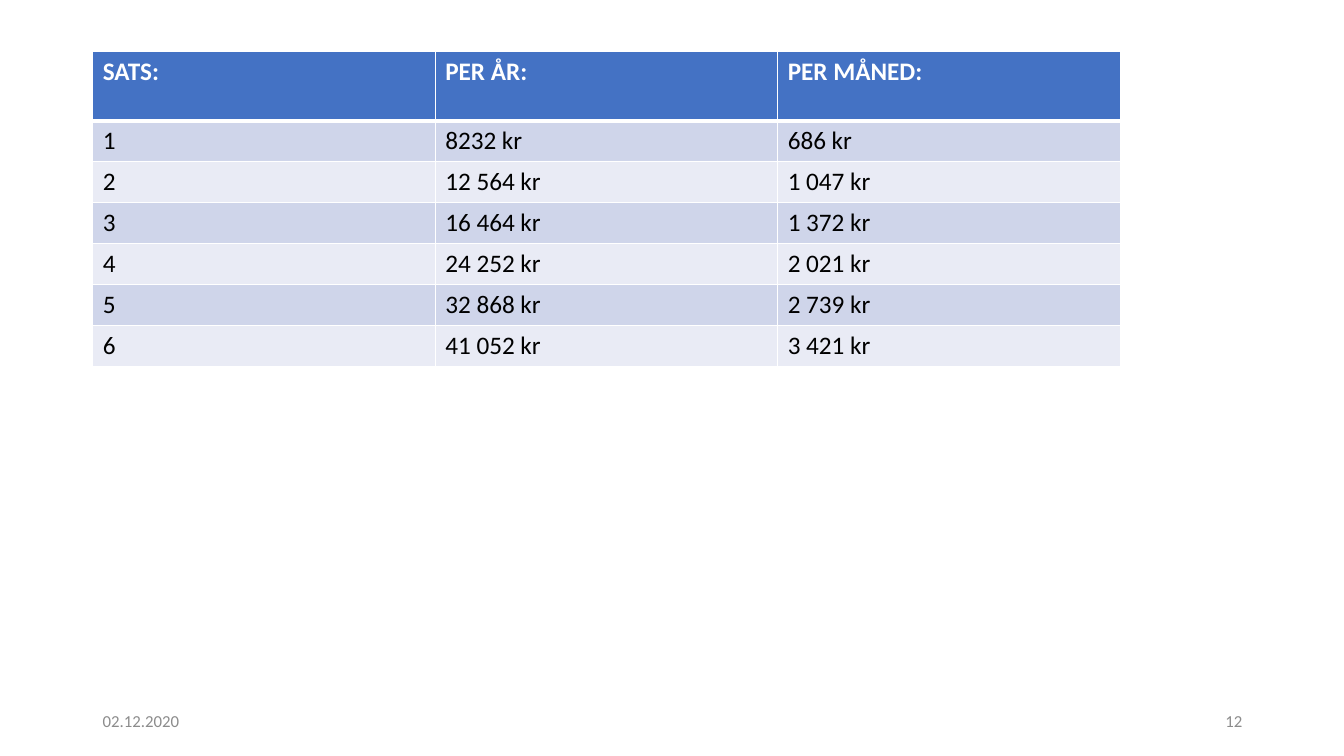
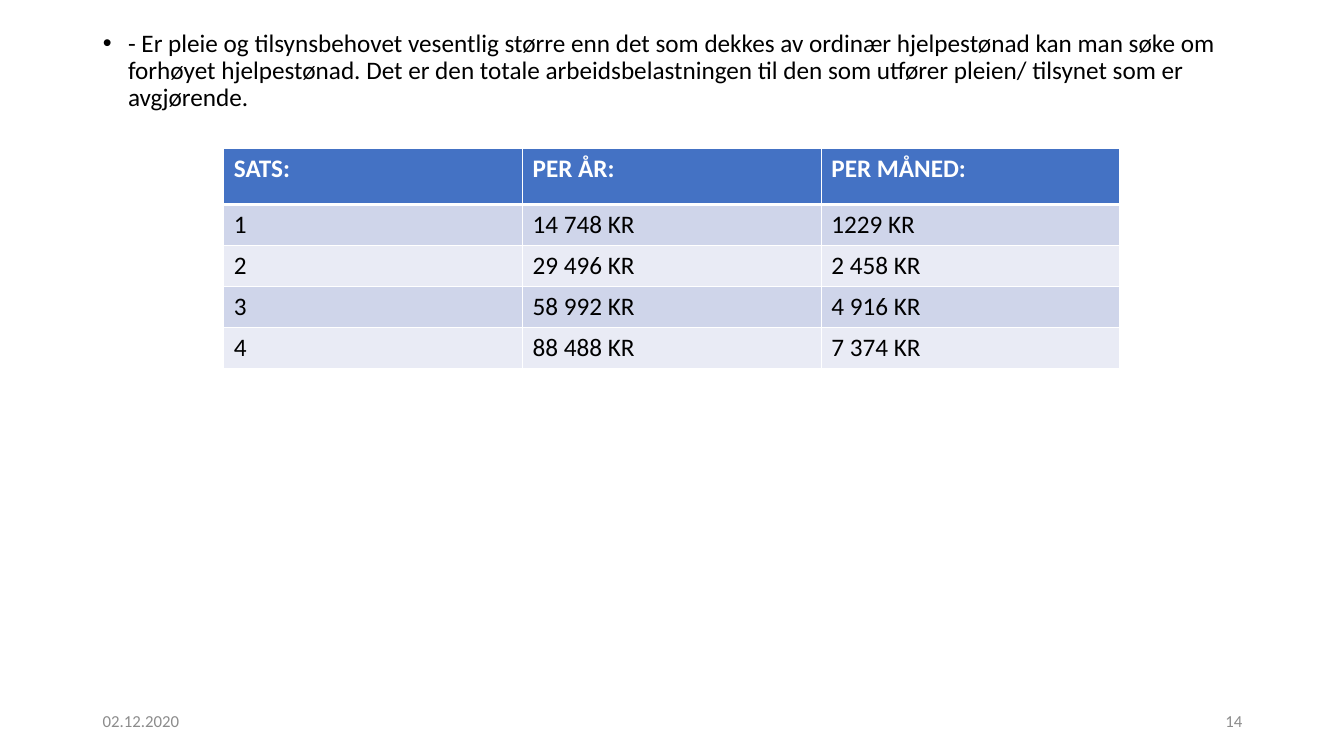
import pptx
import pptx.dml.color
import pptx.enum.text
import pptx.oxml
import pptx.oxml.ns
import pptx.util

Inches = pptx.util.Inches
Pt = pptx.util.Pt
Align = pptx.enum.text.PP_ALIGN
Anchor = pptx.enum.text.MSO_ANCHOR

FONT = "Calibri"
COLORS = {
    "white": "FFFFFF",
    "black": "000000",
    "header": "4472C4",
    "band_dark": "CFD5EA",
    "band_light": "E9EBF5",
    "footer": "8C8C8C",
}
MARGIN = 0.92
CONTENT_WIDTH = 11.5
TABLE_RIGHT = 11.11
ROW_HEIGHT = 0.405
FOOTER_WIDTH = 3
DATE = "02.12.2020"
HEADINGS = ("SATS:", "PER ÅR:", "PER MÅNED:")

SLIDES = [
    {
        "number": "12",
        "body": None,
        "left": MARGIN,
        "top": 0.51,
        "header_height": 0.69,
        "rows": [
            ("1", "8232 kr", "686 kr"),
            ("2", "12 564 kr", "1 047 kr"),
            ("3", "16 464 kr", "1 372 kr"),
            ("4", "24 252 kr", "2 021 kr"),
            ("5", "32 868 kr", "2 739 kr"),
            ("6", "41 052 kr", "3 421 kr"),
        ],
    },
    {
        "number": "14",
        "body": "- Er pleie og tilsynsbehovet vesentlig større enn det som dekkes av "
                "ordinær hjelpestønad kan man søke om forhøyet hjelpestønad. Det er den "
                "totale arbeidsbelastningen til den som utfører pleien/ tilsynet som er "
                "avgjørende.",
        "left": 2.22,
        "top": 1.47,
        "header_height": 0.56,
        "rows": [
            ("1", "14 748 KR", "1229 KR"),
            ("2", "29 496 KR", "2 458 KR"),
            ("3", "58 992 KR", "4 916 KR"),
            ("4", "88 488 KR", "7 374 KR"),
        ],
    },
]


def rgb(name):
    return pptx.dml.color.RGBColor.from_string(COLORS[name])


def write(frame, text, size=18, color="black", bold=False, align=Align.LEFT):
    para = frame.paragraphs[0]
    para.alignment = align
    span = para.add_run()
    span.text = text
    span.font.name = FONT
    span.font.size = Pt(size)
    span.font.bold = bold
    span.font.color.rgb = rgb(color)
    return para


def set_borders(cell, **widths):
    properties = cell._tc.get_or_add_tcPr()
    for side in ("L", "R", "T", "B"):
        properties.append(pptx.oxml.parse_xml(
            f'<a:ln{side} {pptx.oxml.ns.nsdecls("a")} w="{Pt(widths.get(side, 1))}">'
            f'<a:solidFill><a:srgbClr val="{COLORS["white"]}"/></a:solidFill>'
            f'</a:ln{side}>'))


def add_rate_table(page, content):
    rows = [HEADINGS] + content["rows"]
    heights = [content["header_height"]] + [ROW_HEIGHT] * len(content["rows"])
    width = TABLE_RIGHT - content["left"]
    table = page.shapes.add_table(
        len(rows), len(HEADINGS), Inches(content["left"]), Inches(content["top"]),
        Inches(width), Inches(sum(heights))).table
    for column in table.columns:
        column.width = Inches(width / len(HEADINGS))
    for row_index, values in enumerate(rows):
        table.rows[row_index].height = Inches(heights[row_index])
        is_header = row_index == 0
        band = "band_dark" if row_index % 2 else "band_light"
        for column_index, value in enumerate(values):
            cell = table.cell(row_index, column_index)
            set_borders(cell, B=3 if is_header else 1, T=3 if row_index == 1 else 1)
            cell.fill.solid()
            cell.fill.fore_color.rgb = rgb("header" if is_header else band)
            write(cell.text_frame, value, color="white" if is_header else "black",
                  bold=is_header)


def fill_body(body, text):
    body.left, body.top = Inches(MARGIN), Inches(0.25)
    body.width, body.height = Inches(CONTENT_WIDTH), Inches(6.51)
    para = write(body.text_frame, text)
    para.line_spacing = 0.9
    para.space_before = Pt(10)
    properties = para._p.get_or_add_pPr()
    properties.set("marL", str(Inches(0.25)))
    properties.set("indent", str(Inches(-0.25)))
    for tag in ('buFont typeface="Arial"', 'buChar char="•"'):
        properties.append(pptx.oxml.parse_xml(f'<a:{tag} {pptx.oxml.ns.nsdecls("a")}/>'))


def add_footer(page, number):
    right_start = MARGIN + CONTENT_WIDTH - FOOTER_WIDTH
    for left, text, align in ((MARGIN, DATE, Align.LEFT),
                              (right_start, number, Align.RIGHT)):
        box = page.shapes.add_textbox(
            Inches(left), Inches(6.95), Inches(FOOTER_WIDTH), Inches(0.4))
        box.text_frame.word_wrap = True
        box.text_frame.vertical_anchor = Anchor.MIDDLE
        write(box.text_frame, text, size=12, color="footer", align=align)


def add_page(deck, content):
    layout = "Title and Content" if content["body"] else "Blank"
    page = deck.slides.add_slide(deck.slide_layouts.get_by_name(layout))
    if content["body"]:
        title = page.shapes.title.element
        title.getparent().remove(title)
        fill_body(page.placeholders[1], content["body"])
    add_rate_table(page, content)
    add_footer(page, content["number"])


def main():
    deck = pptx.Presentation()
    deck.slide_width = Inches(13.33)
    deck.slide_height = Inches(7.5)
    for content in SLIDES:
        add_page(deck, content)
    deck.save("out.pptx")


if __name__ == "__main__":
    main()
